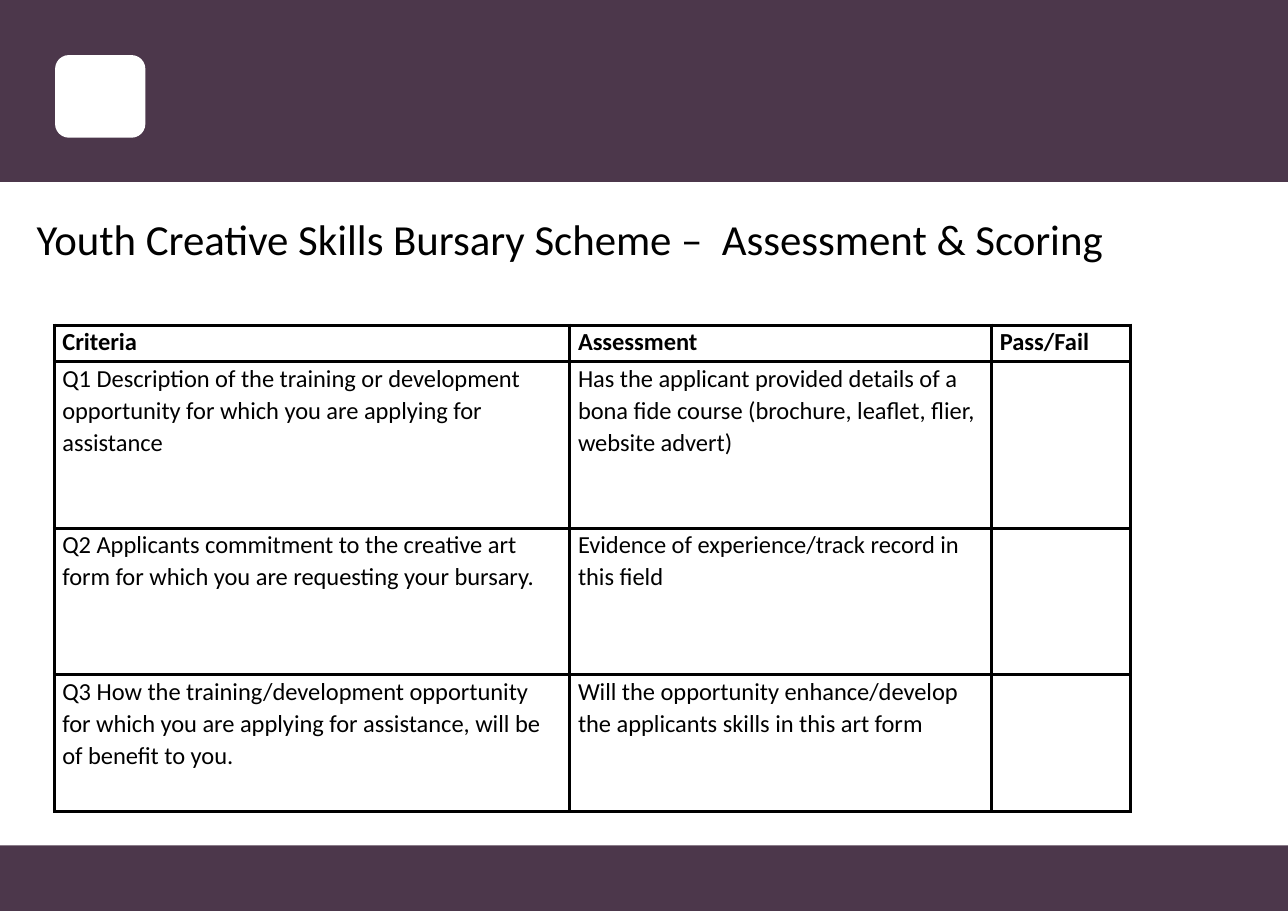
from dataclasses import dataclass

from lxml import etree
from pptx import Presentation
from pptx.dml.color import RGBColor
from pptx.enum.shapes import MSO_SHAPE
from pptx.enum.text import MSO_ANCHOR, MSO_AUTO_SIZE, PP_ALIGN
from pptx.oxml.ns import qn
from pptx.util import Pt

RECT = MSO_SHAPE.RECTANGLE
BADGE = MSO_SHAPE.ROUNDED_RECTANGLE
TOP = MSO_ANCHOR.TOP
LEFT = PP_ALIGN.LEFT
NO_FIT = MSO_AUTO_SIZE.NONE
TITLE_ONLY = 5


@dataclass(frozen=True)
class Theme:
    plum: str = "4C374B"
    white: str = "FFFFFF"
    black: str = "000000"
    face: str = "Calibri"
    title: float = 28
    body: float = 16
    rule: float = 2.25


@dataclass(frozen=True)
class Block:
    kind: int
    left: float
    top: float
    width: float
    height: float
    fill: str


@dataclass(frozen=True)
class Row:
    height: float
    texts: tuple[str, ...]
    bold: bool = False


THEME = Theme()
WIDTH, HEIGHT = 841.68, 595.44
FOOT = 552.5

BLOCKS = (
    Block(RECT, 0, 0, WIDTH, 119, THEME.plum),
    Block(BADGE, 36, 36, 59, 54, THEME.white),
    Block(RECT, 0, FOOT, WIDTH, HEIGHT - FOOT, THEME.plum),
)

HEADING = "Youth Creative Skills Bursary Scheme –  Assessment & Scoring"
COLUMNS = (337, 275.75, 90.5)
ROWS = (
    Row(24, ("Criteria", "Assessment", "Pass/Fail"), True),
    Row(109, (
        "Q1 Description of the training or development opportunity "
        "for which you are applying for assistance",
        "Has the applicant provided details of a bona fide course "
        "(brochure, leaflet, flier, website advert)",
        "",
    )),
    Row(95.5, (
        "Q2 Applicants commitment to the creative art form "
        "for which you are requesting your bursary.",
        "Evidence of experience/track record in this field",
        "",
    )),
    Row(89.5, (
        "Q3 How the training/development opportunity for which you are "
        "applying for assistance, will be of benefit to you.",
        "Will the opportunity enhance/develop the applicants skills "
        "in this art form",
        "",
    )),
)

FRAME = {
    "margin_left": 0, "margin_right": 0, "margin_top": 0, "margin_bottom": 0,
    "vertical_anchor": TOP, "word_wrap": True, "auto_size": NO_FIT,
}
CELL = {
    "margin_left": Pt(5.25), "margin_right": Pt(5.25),
    "margin_top": 0, "margin_bottom": 0, "vertical_anchor": TOP,
}
PLAIN = {"first_row": False, "horz_banding": False}


def apply(target: object, values: dict) -> None:
    for name, value in values.items():
        setattr(target, name, value)


def style(para, size: float, bold: bool, spacing: float) -> None:
    apply(para, {"alignment": LEFT, "line_spacing": spacing})
    apply(para.font, {"name": THEME.face, "size": Pt(size), "bold": bold})
    para.font.color.rgb = RGBColor.from_string(THEME.black)


def draw_block(slide, block: Block) -> None:
    shape = slide.shapes.add_shape(
        block.kind, Pt(block.left), Pt(block.top),
        Pt(block.width), Pt(block.height))
    shape.shadow.inherit = False
    shape.fill.solid()
    shape.fill.fore_color.rgb = RGBColor.from_string(block.fill)
    shape.line.fill.background()


def draw_title(slide) -> None:
    title = slide.shapes.title
    apply(title, {"left": Pt(24), "top": Pt(139),
                  "width": Pt(777), "height": Pt(55.5)})
    apply(title.text_frame, FRAME)
    title.text_frame.text = HEADING
    style(title.text_frame.paragraphs[0], THEME.title, False, 1.0)


def rule_cell(cell) -> None:
    """Draw a solid line on all four sides of a cell."""
    props = cell._tc.get_or_add_tcPr()
    for side in ("a:lnL", "a:lnR", "a:lnT", "a:lnB"):
        line = etree.SubElement(props, qn(side), w=str(Pt(THEME.rule)))
        fill = etree.SubElement(line, qn("a:solidFill"))
        etree.SubElement(fill, qn("a:srgbClr"), val=THEME.black)


def draw_cell(cell, text: str, bold: bool) -> None:
    rule_cell(cell)
    cell.fill.solid()
    cell.fill.fore_color.rgb = RGBColor.from_string(THEME.white)
    apply(cell, CELL)
    cell.text = text
    style(cell.text_frame.paragraphs[0], THEME.body, bold, 1.07)


def draw_table(slide) -> None:
    table = slide.shapes.add_table(
        len(ROWS), len(COLUMNS), Pt(35.5), Pt(212.5), Pt(sum(COLUMNS)),
        Pt(sum(row.height for row in ROWS))).table
    apply(table, PLAIN)
    for column, width in zip(table.columns, COLUMNS):
        column.width = Pt(width)
    for line, row in zip(table.rows, ROWS):
        line.height = Pt(row.height)
        for cell, text in zip(line.cells, row.texts):
            draw_cell(cell, text, row.bold)


def main() -> None:
    deck = Presentation()
    apply(deck, {"slide_width": Pt(WIDTH), "slide_height": Pt(HEIGHT)})
    slide = deck.slides.add_slide(deck.slide_layouts[TITLE_ONLY])
    for block in BLOCKS:
        draw_block(slide, block)
    draw_title(slide)
    draw_table(slide)
    deck.save("out.pptx")


if __name__ == "__main__":
    main()
